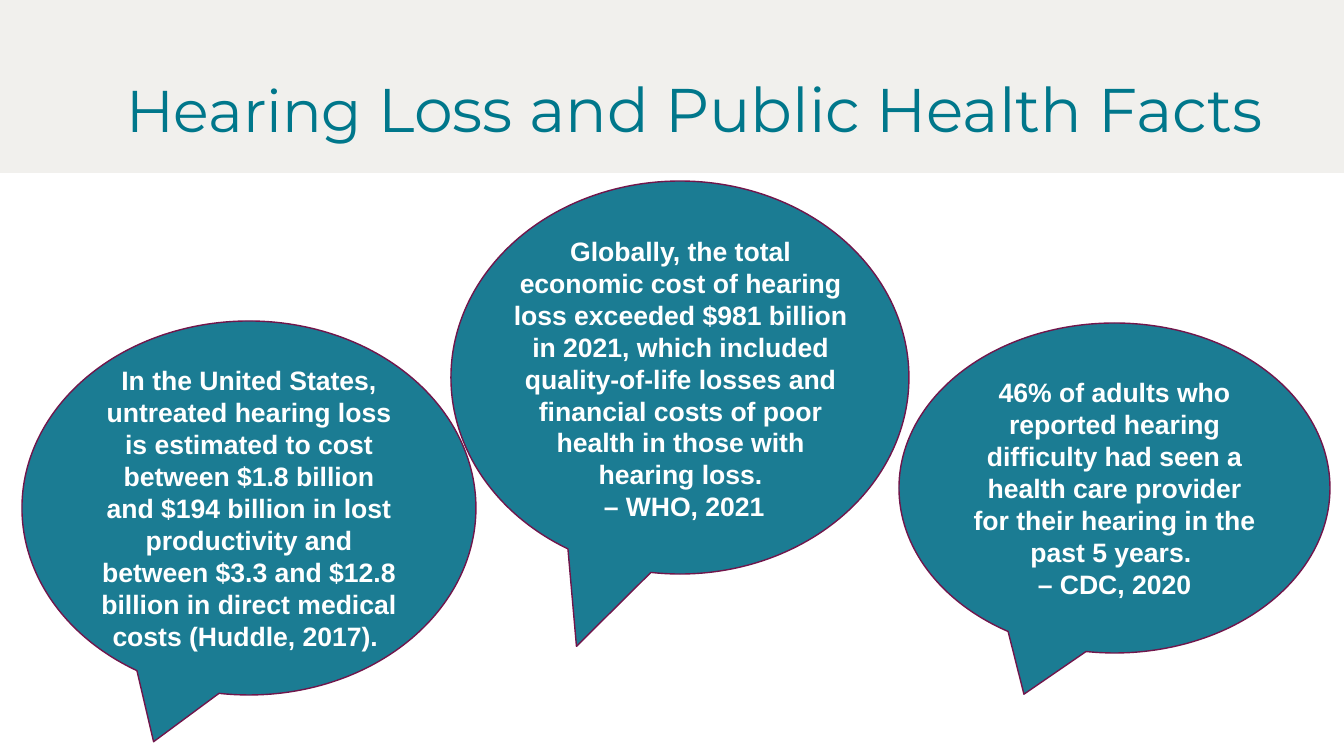
from pptx import Presentation
from pptx.dml.color import RGBColor
from pptx.enum.shapes import MSO_SHAPE
from pptx.enum.text import MSO_ANCHOR, MSO_AUTO_SIZE, PP_ALIGN
from pptx.util import Pt

EMU_PER_PX = 914400 / 100.8
THEME = {
    "band": RGBColor.from_string("F1F0ED"),
    "title": RGBColor.from_string("00778B"),
    "bubble": RGBColor.from_string("1B7C93"),
    "outline": RGBColor.from_string("71164B"),
    "text": RGBColor.from_string("FFFFFF"),
    "title_font": "Montserrat",
    "body_font": "Arial",
    "title_first_size": Pt(42),
    "title_size": Pt(44),
    "body_size": Pt(19),
}


def px(*lengths):
    return [round(length * EMU_PER_PX) for length in lengths]


def add_run(paragraph, text, font_name, size, color, bold=False):
    paragraph.alignment = PP_ALIGN.CENTER
    run = paragraph.add_run()
    run.text = text
    run.font.name = font_name
    run.font.size = size
    run.font.bold = bold
    run.font.color.rgb = color


presentation = Presentation()
presentation.slide_width, presentation.slide_height = px(1344, 756)
slide = presentation.slides.add_slide(presentation.slide_layouts[5])

# Header band, placed behind the title
band = slide.shapes.add_shape(MSO_SHAPE.RECTANGLE, *px(0, 0, 1344, 173))
band.shadow.inherit = False
band.fill.solid()
band.fill.fore_color.rgb = THEME["band"]
band.line.fill.background()
slide.shapes.title.element.addprevious(band.element)

# Title
title = slide.shapes.title
title.left, title.top, title.width, title.height = px(93, 40, 1204, 146)
title.text_frame.vertical_anchor = MSO_ANCHOR.MIDDLE
title.text_frame.auto_size = MSO_AUTO_SIZE.NONE
title_paragraph = title.text_frame.paragraphs[0]
title_paragraph.line_spacing = 0.9
for text, size in [
    ("Hearing", THEME["title_first_size"]),
    (" Loss and Public Health Facts", THEME["title_size"]),
]:
    add_run(title_paragraph, text, THEME["title_font"], size, THEME["title"])

# Speech bubbles: bounds, tail tip, separate text bounds, paragraphs
bubbles = [
    ((22, 321, 454, 374), (-0.21, 0.625), None, [
        "In the United States, untreated hearing loss is estimated to cost "
        "between $1.8 billion and $194 billion in lost productivity and between "
        "$3.3 and $12.8 billion in direct medical costs (Huddle, 2017). ",
    ]),
    ((899, 323, 431, 330), (-0.21, 0.625), None, [
        "46% of adults who reported hearing difficulty had seen a health care "
        "provider for their hearing in the past 5 years. ",
        "– CDC, 2020",
    ]),
    ((451, 181, 458, 393), (-0.226, 0.684), (500, 230, 361, 300), [
        "Globally, the total economic cost of hearing loss exceeded $981 billion "
        "in 2021, which included quality-of-life losses and financial costs of "
        "poor health in those with hearing loss.",
        " – WHO, 2021",
    ]),
]
for bounds, tail, text_bounds, facts in bubbles:
    bubble = slide.shapes.add_shape(MSO_SHAPE.OVAL_CALLOUT, *px(*bounds))
    bubble.shadow.inherit = False
    bubble.adjustments[0], bubble.adjustments[1] = tail
    bubble.fill.solid()
    bubble.fill.fore_color.rgb = THEME["bubble"]
    bubble.line.color.rgb = THEME["outline"]
    bubble.line.width = Pt(1)

    # The large bubble carries its text in a wider box
    text_shape = bubble
    if text_bounds:
        text_shape = slide.shapes.add_textbox(*px(*text_bounds))
        text_shape.text_frame.auto_size = MSO_AUTO_SIZE.SHAPE_TO_FIT_TEXT
    else:
        bubble.text_frame.vertical_anchor = MSO_ANCHOR.MIDDLE
    frame = text_shape.text_frame
    frame.word_wrap = True
    for index, fact in enumerate(facts):
        paragraph = frame.add_paragraph() if index else frame.paragraphs[0]
        add_run(paragraph, fact, THEME["body_font"], THEME["body_size"], THEME["text"], True)

presentation.save("out.pptx")
